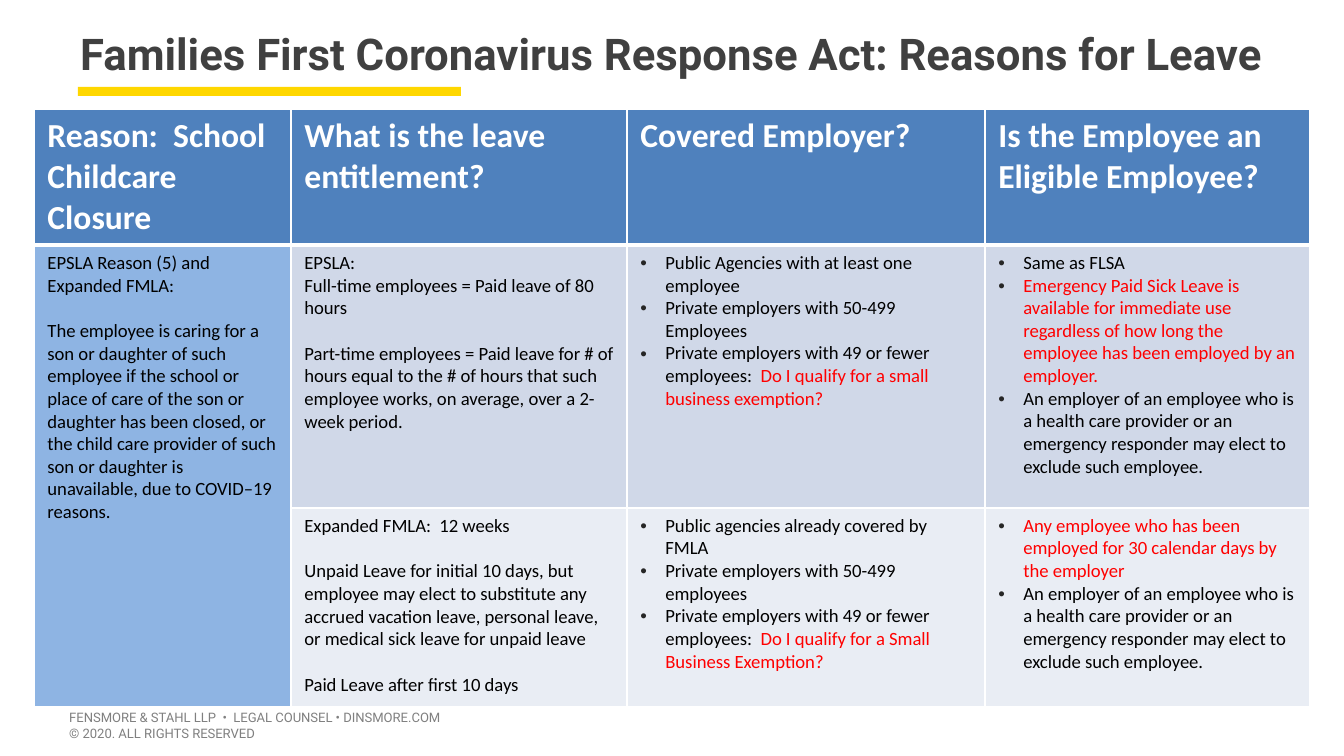
from lxml import etree
from pptx import Presentation
from pptx.dml.color import RGBColor
from pptx.enum import shapes, text
from pptx.oxml import ns
from pptx import util as u

PX = 9144000 / 1344  # EMU in one px
COLORS = {
    "white": "FFFFFF", "black": "000000", "red": "FF0000", "title": "404040",
    "gray": "808080", "gold": "FFD700", "header": "4F81BD", "reason": "8EB4E3",
    "band_dark": "D0D8E8", "band_light": "E9EDF4", "bullet": "262626",
}
COLUMN_WIDTHS = [257, 336, 358, 325]
ROW_HEIGHTS = [136, 263, 199]
BULLET_COLUMNS = (2, 3)
BULLET_INDENT = 25
BLOCK_GAP = 12.2  # points between blocks of text in a cell

HEADERS = [
    "Reason:  School Childcare Closure",
    "What is the leave entitlement?",
    "Covered Employer?",
    "Is the Employee an Eligible Employee?",
]
CARE_EXCLUSION = ("An employer of an employee who is a health care provider or an "
                  "emergency responder may elect to exclude such employee.")

# Each cell is a list of blocks, each block a list of paragraphs.
# A paragraph is a string, or a pair of black and red text.
BODY = [
    [
        [["EPSLA Reason (5) and Expanded FMLA:"],
         ["The employee is caring for a son or daughter of such employee if the "
          "school or place of care of the son or daughter has been closed, or the "
          "child care provider of such son or daughter is unavailable, due to "
          "COVID–19 reasons."]],
        [["EPSLA:", "Full-time employees = Paid leave of 80 hours"],
         ["Part-time employees = Paid leave for # of hours equal to the # of hours "
          "that such employee works, on average, over a 2-week period."]],
        [["Public Agencies with at least one employee",
          "Private employers with 50-499 Employees",
          ("Private employers with 49 or fewer employees:  ",
           "Do I qualify for a small business exemption?")]],
        [["Same as FLSA",
          ("", "Emergency Paid Sick Leave is available for immediate use regardless "
               "of how long the employee has been employed by an employer."),
          CARE_EXCLUSION]],
    ],
    [
        None,  # covered by the merged reason cell
        [["Expanded FMLA:  12 weeks"],
         ["Unpaid Leave for initial 10 days, but employee may elect to substitute "
          "any accrued vacation leave, personal leave, or medical sick leave for "
          "unpaid leave"],
         ["Paid Leave after first 10 days"]],
        [["Public agencies already covered by FMLA",
          "Private employers with 50-499 employees",
          ("Private employers with 49 or fewer employees:  ",
           "Do I qualify for a Small Business Exemption?")]],
        [[("", "Any employee who has been employed for 30 calendar days by the "
               "employer"),
          CARE_EXCLUSION]],
    ],
]


def px(value):
    return u.Emu(round(value * PX))


def rgb(name):
    return RGBColor.from_string(COLORS[name])


def style(paragraph, font_name, size, color, bold=False):
    font = paragraph.font
    font.name, font.size, font.bold = font_name, u.Pt(size), bold
    font.color.rgb = rgb(color)


def add_text(slide, box, lines, size, color, bold=False):
    frame = slide.shapes.add_textbox(*map(px, box)).text_frame
    frame.word_wrap = True
    frame.vertical_anchor = text.MSO_ANCHOR.TOP
    for index, line in enumerate(lines):
        paragraph = frame.paragraphs[0] if index == 0 else frame.add_paragraph()
        paragraph.text = line
        style(paragraph, "Roboto", size, color, bold)


def add_bar(slide, box, color):
    shape = slide.shapes.add_shape(shapes.MSO_SHAPE.RECTANGLE, *map(px, box))
    shape.shadow.inherit = False
    shape.fill.solid()
    shape.fill.fore_color.rgb = rgb(color)
    shape.line.fill.background()


def add_line(slide, ends, color, width):
    line = slide.shapes.add_connector(shapes.MSO_CONNECTOR.STRAIGHT, *map(px, ends))
    line.line.color.rgb = rgb(color)
    line.line.width = u.Pt(width)
    etree.SubElement(line._element.spPr, ns.qn("a:effectLst"))


def add_bullet(paragraph):
    properties = paragraph._p.get_or_add_pPr()
    properties.set("marL", str(px(BULLET_INDENT)))
    properties.set("indent", str(-px(BULLET_INDENT)))
    color = etree.SubElement(properties, ns.qn("a:buClr"))
    etree.SubElement(color, ns.qn("a:srgbClr"), val=COLORS["bullet"])
    etree.SubElement(properties, ns.qn("a:buFont"), typeface="Arial")
    etree.SubElement(properties, ns.qn("a:buChar"), char="•")


def paint_cell(cell, fill, bottom_width=1):
    # Borders come before the fill in the cell properties
    properties = cell._tc.get_or_add_tcPr()
    for side, width in (("L", 1), ("R", 1), ("T", 1), ("B", bottom_width)):
        border = etree.SubElement(properties, ns.qn(f"a:ln{side}"), w=str(u.Pt(width)))
        solid = etree.SubElement(border, ns.qn("a:solidFill"))
        etree.SubElement(solid, ns.qn("a:srgbClr"), val=COLORS["white"])
    cell.fill.solid()
    cell.fill.fore_color.rgb = rgb(fill)


def fill_body_cell(cell, blocks, bulleted):
    frame = cell.text_frame
    paragraph = None
    for block in blocks:
        for index, content in enumerate(block):
            first = paragraph is None
            paragraph = frame.paragraphs[0] if first else frame.add_paragraph()
            if index == 0 and not first:
                paragraph.space_before = u.Pt(BLOCK_GAP)
            if bulleted:
                add_bullet(paragraph)
            style(paragraph, "Calibri", 10, "black")
            parts = (content,) if isinstance(content, str) else content
            for part, color in zip(parts, ("black", "red")):
                if part:
                    run = paragraph.add_run()
                    run.text = part
                    run.font.color.rgb = rgb(color)


def add_leave_table(slide):
    table = slide.shapes.add_table(
        len(ROW_HEIGHTS), len(COLUMN_WIDTHS), px(34), px(109),
        px(sum(COLUMN_WIDTHS)), px(sum(ROW_HEIGHTS))).table
    table.first_row = table.horz_banding = False
    for column, width in zip(table.columns, COLUMN_WIDTHS):
        column.width = px(width)
    for row, height in zip(table.rows, ROW_HEIGHTS):
        row.height = px(height)

    # Header row
    for index, heading in enumerate(HEADERS):
        cell = table.cell(0, index)
        cell.text = heading
        style(cell.text_frame.paragraphs[0], "Calibri", 18, "white", bold=True)
        paint_cell(cell, "header", bottom_width=3)

    # Body rows
    table.cell(1, 0).merge(table.cell(2, 0))
    for row, (cells, band) in enumerate(zip(BODY, ("band_dark", "band_light")), 1):
        for column, blocks in enumerate(cells):
            cell = table.cell(row, column)
            paint_cell(cell, "reason" if column == 0 else band)
            if blocks:
                fill_body_cell(cell, blocks, column in BULLET_COLUMNS)


def main():
    presentation = Presentation()
    presentation.slide_width, presentation.slide_height = px(1344), px(756)
    slide = presentation.slides.add_slide(presentation.slide_layouts[6])

    # Footer rule, title and its accent bar
    add_line(slide, (67, 705, 504, 705), "gray", 0.5)
    add_bar(slide, (78, 87, 383, 9), "gold")
    add_text(slide, (67, 20, 1210, 101),
             ["Families First Coronavirus Response Act: Reasons for Leave"],
             23.4, "title", bold=True)

    add_leave_table(slide)

    # Footer
    add_text(slide, (56, 703, 444, 47),
             ["FENSMORE & STAHL LLP  •  LEGAL COUNSEL • DINSMORE.COM",
              "© 2020. ALL RIGHTS RESERVED"], 7, "gray")
    presentation.save("out.pptx")


if __name__ == "__main__":
    main()
